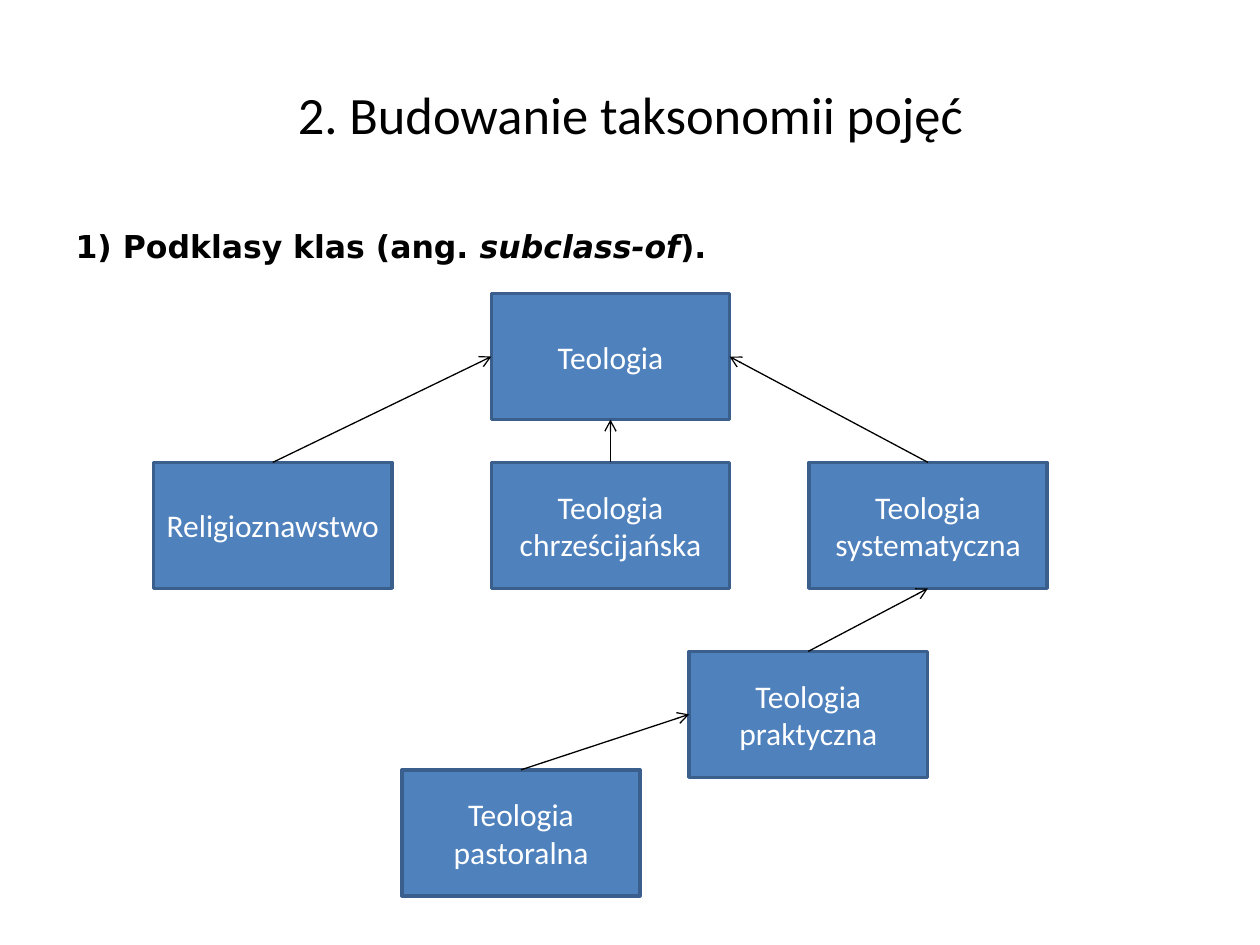
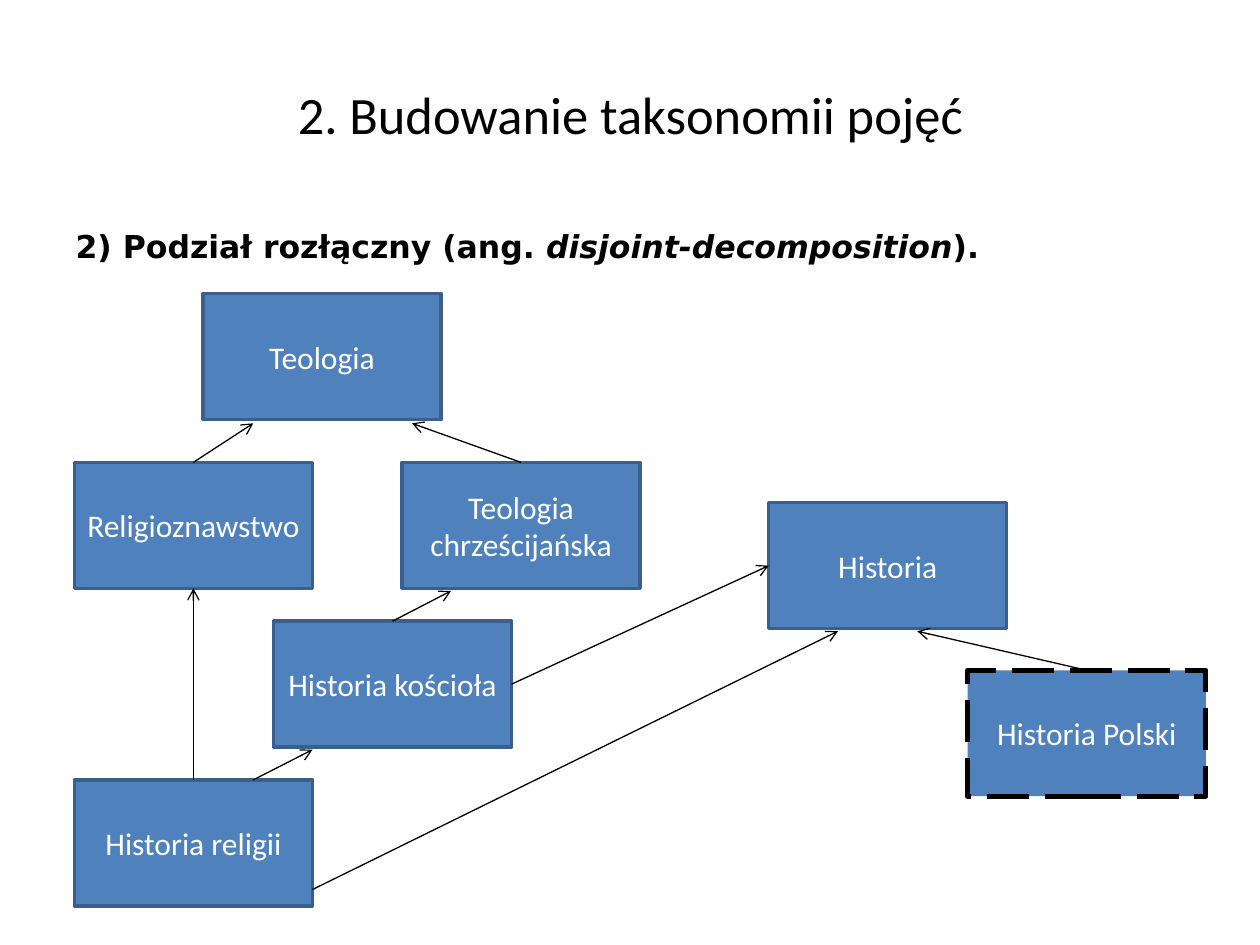
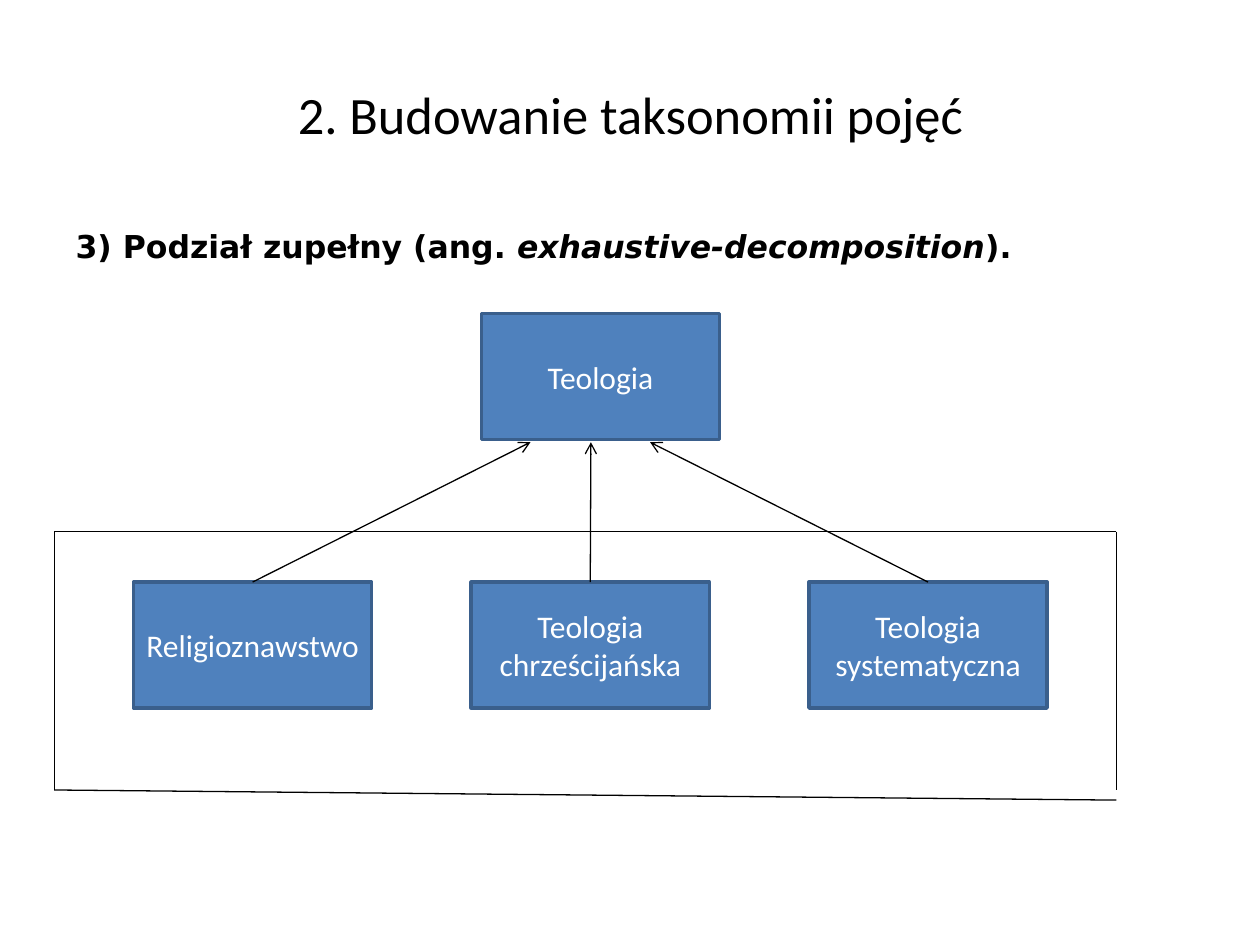
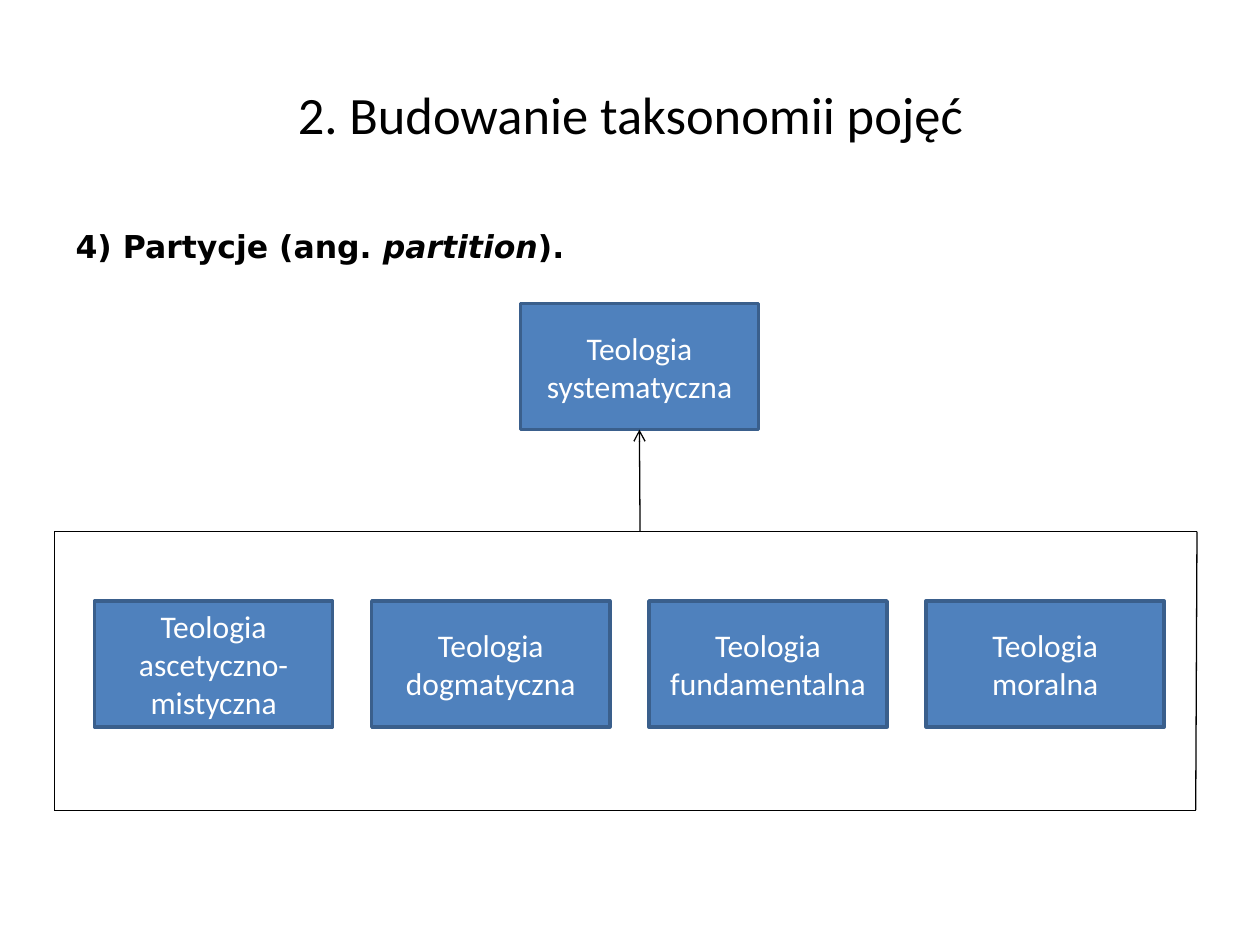
"""Build four slides on dividing concepts in a taxonomy."""
from dataclasses import dataclass

from lxml import etree
from pptx import Presentation
from pptx.dml.color import RGBColor
from pptx.enum import dml, shapes, text
from pptx.oxml import ns
from pptx.util import Inches, Pt

TOP, LEFT, BOTTOM, RIGHT = range(4)


@dataclass(frozen=True)
class Theme:
    """Hold the colours, fonts and sizes."""
    ink: RGBColor = RGBColor(0x00, 0x00, 0x00)
    paper: RGBColor = RGBColor(0xFF, 0xFF, 0xFF)
    fill: RGBColor = RGBColor(0x4F, 0x81, 0xBD)
    edge: RGBColor = RGBColor(0x3A, 0x5F, 0x8C)
    sans: str = "Calibri"
    lead: str = "DejaVu Sans"
    big: int = 30
    small: int = 18
    wide: float = 1.89
    high: float = 1.0


class Deck:
    """Hold the style and the current slide."""

    def __init__(self, theme):
        """Open a blank deck."""
        self.theme = theme
        self.prs = Presentation()
        self.prs.slide_width, self.prs.slide_height = Inches(10), Inches(7.5)
        self.slide = None

    def place(self, shape, left, top, width, height):
        """Move and size a shape."""
        shape.left, shape.top = Inches(left), Inches(top)
        shape.width, shape.height = Inches(width), Inches(height)

    def style(self, para, name, size, color):
        """Set the font of a paragraph."""
        font = para.font
        font.name, font.size = name, Pt(size)
        font.color.rgb = color

    def page(self, start, term):
        """Add a slide with the title and a heading that ends in a term."""
        look = self.theme
        self.slide = self.prs.slides.add_slide(self.prs.slide_layouts[1])
        title, body = self.slide.placeholders
        self.place(title, 0.28, 0.6, 9.45, 0.61)
        frame = title.text_frame
        frame.text = "2. Budowanie taksonomii pojęć"
        frame.vertical_anchor = text.MSO_ANCHOR.TOP
        frame.auto_size = text.MSO_AUTO_SIZE.SHAPE_TO_FIT_TEXT
        para = frame.paragraphs[0]
        para.alignment = text.PP_ALIGN.CENTER
        self.style(para, look.sans, look.big, look.ink)

        self.place(body, 0.5, 1.75, 9, 4.95)
        body.text_frame.auto_size = text.MSO_AUTO_SIZE.NONE
        para = body.text_frame.paragraphs[0]
        para.space_before = Pt(0)
        etree.SubElement(para._p.get_or_add_pPr(), ns.qn("a:buNone"))
        self.style(para, look.lead, look.small, look.ink)
        para.font.bold = True
        for part in (f"{start} (ang. ", term, ")."):
            run = para.add_run()
            run.text = part
            if part == term:
                run.font.italic = True

    def box(self, label, left, top, dashed=False):
        """Add a concept box."""
        look = self.theme
        box = self.slide.shapes.add_shape(
            shapes.MSO_SHAPE.RECTANGLE, Inches(left), Inches(top),
            Inches(look.wide), Inches(look.high))
        box.shadow.inherit = False
        box.fill.solid()
        box.fill.fore_color.rgb = look.fill
        box.line.color.rgb = look.ink if dashed else look.edge
        box.line.width = Pt(3 if dashed else 2)
        if dashed:
            box.line.dash_style = dml.MSO_LINE.LONG_DASH
        frame = box.text_frame
        frame.text = label
        frame.word_wrap = True
        frame.vertical_anchor = text.MSO_ANCHOR.MIDDLE
        para = frame.paragraphs[0]
        para.alignment = text.PP_ALIGN.CENTER
        self.style(para, look.sans, look.small, look.paper)
        return box

    def row(self, labels, left, top, step):
        """Add evenly spaced boxes."""
        return [self.box(label, left + i * step, top)
                for i, label in enumerate(labels)]

    def line(self, start, end):
        """Draw a line between points or (box, side) pairs."""
        wire = self.slide.shapes.add_connector(
            shapes.MSO_CONNECTOR.STRAIGHT, 0, 0, 0, 0)
        if isinstance(start[0], (int, float)):
            wire.begin_x, wire.begin_y = map(Inches, start)
        else:
            wire.begin_connect(*start)
        if isinstance(end[0], (int, float)):
            wire.end_x, wire.end_y = map(Inches, end)
        else:
            wire.end_connect(*end)
        wire.line.color.rgb = self.theme.ink
        wire.line.width = Pt(0.75)
        etree.SubElement(wire._element.spPr, ns.qn("a:effectLst"))
        return wire

    def arrow(self, start, end):
        """Draw a line with an open arrowhead at its end."""
        wire = self.line(start, end)
        etree.SubElement(wire.line._get_or_add_ln(), ns.qn("a:tailEnd"),
                         type="arrow")

    def loop(self, *points):
        """Draw a line through each point in turn."""
        for start, end in zip(points, points[1:]):
            self.line(start, end)


def subclass(deck):
    """Show subclasses."""
    deck.page("1) Podklasy klas", "subclass-of")
    root = deck.box("Teologia", 3.9, 2.33)
    system = deck.box("Teologia systematyczna", 6.42, 3.67)
    christ = deck.box("Teologia chrześcijańska", 3.9, 3.67)
    study = deck.box("Religioznawstwo", 1.22, 3.67)
    pastor = deck.box("Teologia pastoralna", 3.19, 6.11)
    applied = deck.box("Teologia praktyczna", 5.47, 5.17)
    for low, high, side in ((study, root, LEFT), (system, root, RIGHT),
                            (christ, root, BOTTOM), (applied, system, BOTTOM),
                            (pastor, applied, LEFT)):
        deck.arrow((low, TOP), (high, side))


def disjoint(deck):
    """Show a disjoint split."""
    deck.page("2) Podział rozłączny", "disjoint-decomposition")
    deck.box("Teologia", 1.61, 2.33)
    study = deck.box("Religioznawstwo", 0.59, 3.67)
    christ = deck.box("Teologia chrześcijańska", 3.19, 3.67)
    church = deck.box("Historia kościoła", 2.17, 4.93)
    faith = deck.box("Historia religii", 0.59, 6.19)
    past = deck.box("Historia", 6.1, 3.99)
    polish = deck.box("Historia Polski", 7.68, 5.32, dashed=True)
    for start, end in (((study, TOP), (2.01, 3.36)),
                       ((christ, TOP), (3.27, 3.36)),
                       ((faith, TOP), (study, BOTTOM)),
                       ((2.01, 6.19), (2.48, 5.95)),
                       ((church, RIGHT), (past, LEFT)),
                       ((2.48, 7.06), (6.65, 5.01)),
                       ((polish, TOP), (7.28, 5.01)),
                       ((church, TOP), (3.58, 4.69))):
        deck.arrow(start, end)


def exhaust(deck):
    """Show an exhaustive split."""
    deck.page("3) Podział zupełny", "exhaustive-decomposition")
    deck.box("Teologia", 3.82, 2.49)
    parts = deck.row(("Religioznawstwo", "Teologia chrześcijańska",
                      "Teologia systematyczna"), 1.06, 4.62, 2.68)
    for part, x in zip(parts, (4.21, 4.69, 5.16)):
        deck.arrow((part, TOP), (x, 3.51))
    deck.loop((8.86, 6.27), (8.86, 4.22), (0.43, 4.22), (0.43, 6.27),
              (8.86, 6.35))


def partition(deck):
    """Show a partition."""
    deck.page("4) Partycje", "partition")
    root = deck.box("Teologia systematyczna", 4.13, 2.41)
    deck.row(("Teologia ascetyczno-mistyczna", "Teologia dogmatyczna",
              "Teologia fundamentalna", "Teologia moralna"), 0.75, 4.77, 2.2)
    deck.loop((0.43, 4.22), (9.5, 4.22), (9.49, 6.43), (0.43, 6.43),
              (0.43, 4.22))
    deck.arrow((5.08, 4.22), (root, BOTTOM))


def main():
    """Build and save the deck."""
    deck = Deck(Theme())
    for build in (subclass, disjoint, exhaust, partition):
        build(deck)
    deck.prs.save("out.pptx")


if __name__ == "__main__":
    main()
